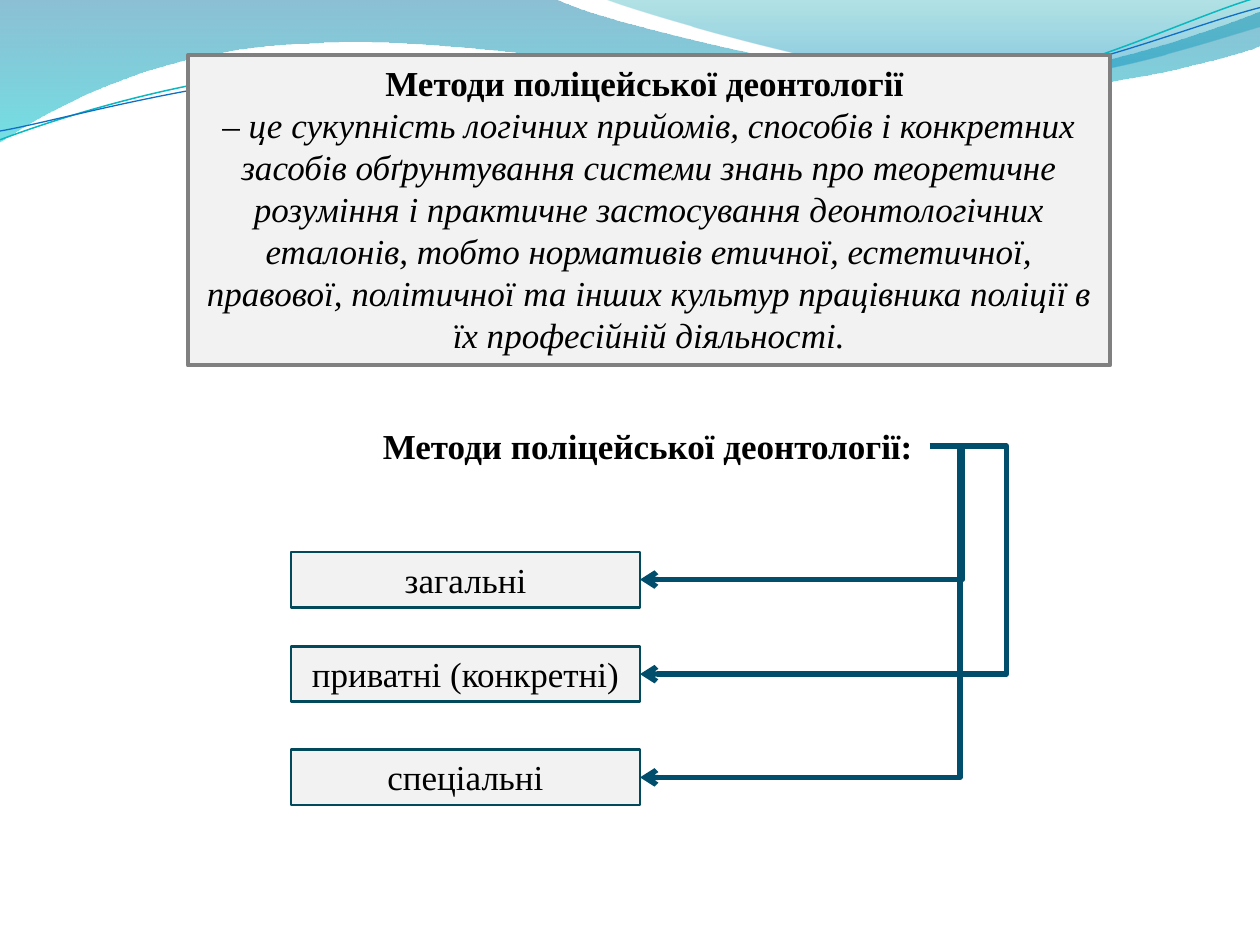
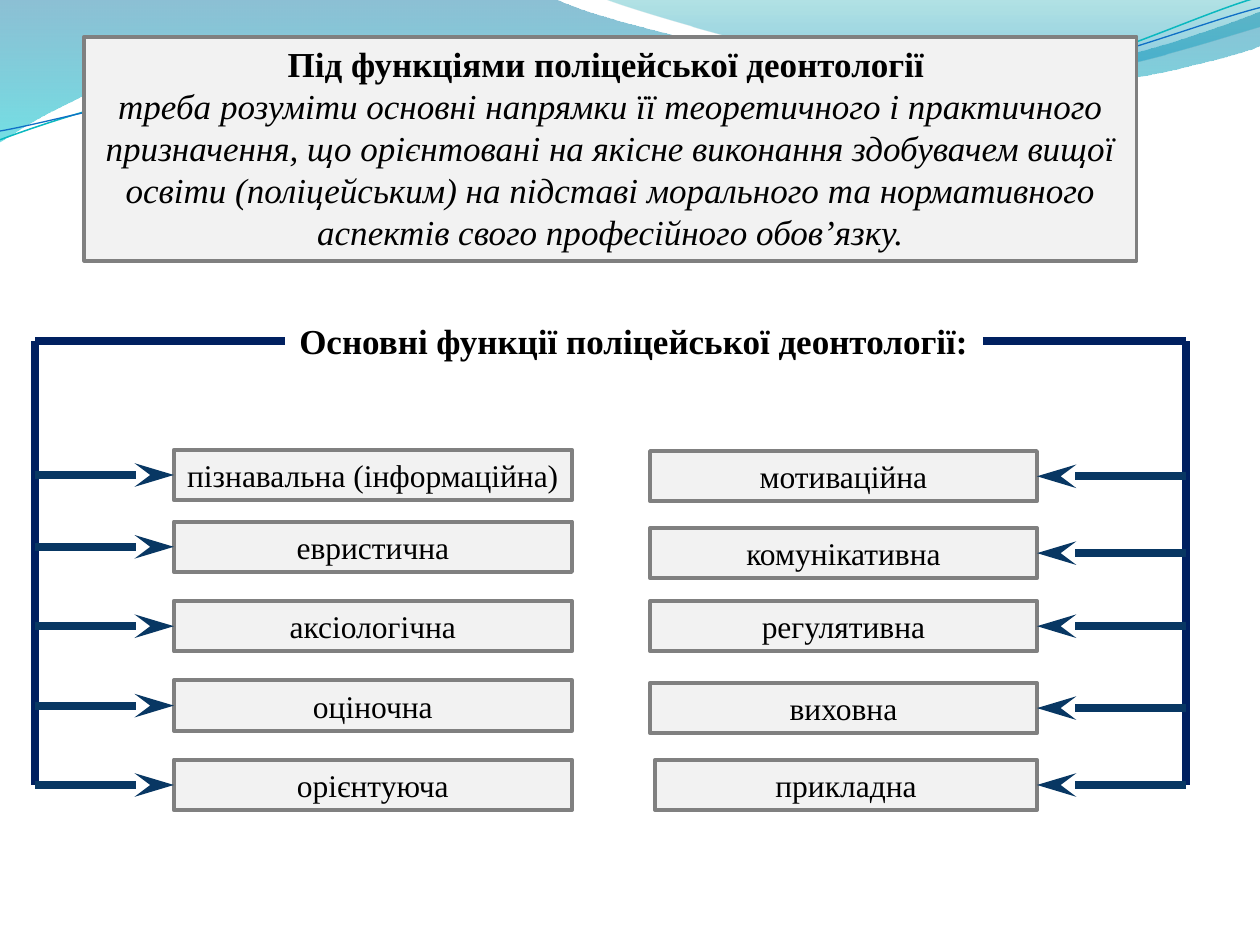
from math import cos, radians, sin

from pptx import Presentation
from pptx.dml.color import RGBColor
from pptx.enum.shapes import MSO_CONNECTOR, MSO_SHAPE
from pptx.enum.text import MSO_ANCHOR, MSO_AUTO_SIZE, PP_ALIGN
from pptx.oxml import parse_xml
from pptx.oxml.ns import nsdecls, qn
from pptx.util import Inches, Pt
from lxml.etree import SubElement

FONT = "Times New Roman"
BLACK, WHITE = "000000", "FFFFFF"
PALE, GREY = "F2F2F2", "808080"
TEAL, STEEL = "03495C", "004E6C"
NAVY, BLUE = "002060", "083763"
LEFT, RIGHT = 1, 3
TILT = -2.7

# A wave is a frame, a start point, then lines (2 numbers) and curves (6).
BANDS = [
    ((-0.01, -0.01, 10.02, 1.14), (0, 0),
     [(4.4, -0.01), (4.76, 0.17, 6.64, 0.63, 7.58, 0.63),
      (8.53, 0.63, 9.58, 0.26, 10, 0.09), (10.01, 0.36),
      (9.83, 0.44, 8.7, 0.76, 7.46, 0.75),
      (6.22, 0.75, 3.82, 0.28, 2.57, 0.34),
      (1.29, 0.36, 0.46, 0.83, -0.01, 1.13), (0, 0)],
     [(0, "0074A1", 45), (100, "00C6CF", 55)]),
    ((4.79, -0.01, 5.21, 0.7), (4.79, -0.01),
     [(5.09, 0.11, 6.82, 0.62, 7.69, 0.65),
      (8.56, 0.69, 9.61, 0.32, 10, 0.21), (10, 0), (4.79, -0.01)],
     [(0, "00A1A9", 30), (80, "008BBF", 45)]),
]
THREADS = [
    ((-0.02, 0.22, 10.02, 0.71), (0, 1.11),
     [(0.48, 0.93, 1.58, 0.57, 2.77, 0.52),
      (3.95, 0.47, 5.93, 0.89, 7.13, 0.8),
      (8.33, 0.71, 9.38, 0.15, 9.98, -0.02)], "0AB8BF", 0.85),
    ((-0.02, 0.3, 10.03, 0.58), (0, 1.04),
     [(0.47, 0.96, 1.64, 0.61, 2.83, 0.56),
      (4.03, 0.51, 5.97, 0.84, 7.17, 0.75),
      (8.36, 0.67, 9.41, 0.21, 10, 0.06)], "0F6FC6", 0.75),
]


def paint(target, color):
    """Give a fill or a font a solid colour from a hex string."""
    if hasattr(target, "solid"):
        target.solid()
        target = target.fore_color
    else:
        target = target.color
    target.rgb = RGBColor.from_string(color)


def place_in(frame, x, y, tilt):
    """Turn a slide point into a point of a frame that is tilted."""
    left, top, w, h = frame
    dx, dy = x - left - w / 2, y - top - h / 2
    c, s = cos(radians(-tilt)), sin(radians(-tilt))
    return Inches(w / 2 + dx * c - dy * s), Inches(h / 2 + dx * s + dy * c)


def add_wave(slide, frame, start, steps, tilt=0):
    """Build the frame as an outline, then bend it into the wave."""
    x, y, w, h = frame
    pen = slide.shapes.build_freeform(Inches(x), Inches(y))
    pen.add_line_segments([(Inches(x + w), Inches(y)),
                           (Inches(x + w), Inches(y + h))], close=not tilt)
    wave = pen.convert_to_shape()
    wave.rotation = tilt % 360
    wave.shadow.inherit = False
    wave.fill.background()
    outline = next(wave.element.iter(qn("a:path")))
    for old in list(outline):
        if old.tag != qn("a:close"):
            outline.remove(old)
    names = {2: "a:lnTo", 6: "a:cubicBezTo"}
    moves = [("a:moveTo", start)] + [(names[len(s)], s) for s in steps]
    for i, (name, spots) in enumerate(moves):
        move = SubElement(outline, qn(name))
        outline.insert(i, move)
        for px, py in zip(spots[::2], spots[1::2]):
            px, py = place_in(frame, px, py, tilt)
            SubElement(move, qn("a:pt"), x=str(px), y=str(py))
    return wave


def fade(shape, stops):
    """Fill a shape from top to bottom with (place, colour, opacity) stops."""
    marks = "".join(
        f'<a:gs pos="{place * 1000}"><a:srgbClr val="{color}">'
        f'<a:alpha val="{alpha * 1000}"/></a:srgbClr></a:gs>'
        for place, color, alpha in stops)
    blend = parse_xml(f'<a:gradFill {nsdecls("a")}><a:gsLst>{marks}</a:gsLst>'
                      '<a:lin ang="5400000" scaled="0"/></a:gradFill>')
    props = shape.element.spPr
    props.replace(props.find(qn("a:noFill")), blend)


def add_waves(slide, layout):
    """Draw the top waves and move them to the layout that all slides share."""
    waves = []
    for frame, start, steps, stops in BANDS:
        band = add_wave(slide, frame, start, steps)
        fade(band, stops)
        band.line.fill.background()
        waves.append(band)
    for frame, start, steps, color, width in THREADS:
        thread = add_wave(slide, frame, start, steps, TILT)
        paint(thread.line.fill, color)
        thread.line.width = Pt(width)
        waves.append(thread)
    for wave in waves:
        layout.shapes.element.append(wave.element)


def add_text(frame, text, size=20, bold=False, italic=False, first=True,
             align=PP_ALIGN.CENTER):
    para = frame.paragraphs[0] if first else frame.add_paragraph()
    para.alignment = align
    run = para.add_run()
    run.text = text
    font = run.font
    font.name, font.size, font.bold, font.italic = FONT, Pt(size), bold, italic
    paint(font, BLACK)


def add_box(slide, x, y, w, h, fill=PALE, line=GREY, width=2.25, wrap=True):
    box = slide.shapes.add_shape(MSO_SHAPE.RECTANGLE, Inches(x), Inches(y),
                                 Inches(w), Inches(h))
    box.shadow.inherit = False
    paint(box.fill, fill)
    if line:
        paint(box.line.fill, line)
        box.line.width = Pt(width)
    else:
        box.line.fill.background()
    frame = box.text_frame
    frame.word_wrap = wrap
    frame.auto_size = MSO_AUTO_SIZE.SHAPE_TO_FIT_TEXT
    frame.vertical_anchor = MSO_ANCHOR.TOP
    return box


def add_term(slide, place, term, meaning):
    """Add a box with a bold term and its meaning in italics."""
    frame = add_box(slide, *place).text_frame
    add_text(frame, term, bold=True)
    add_text(frame, meaning, italic=True, first=False)


def add_label(slide, place, text, wrap=True, align=PP_ALIGN.CENTER):
    label = add_box(slide, *place, fill=WHITE, line=None, wrap=wrap)
    add_text(label.text_frame, text, bold=True, align=align)
    return label


def add_item(slide, place, text, size, **look):
    item = add_box(slide, *place, **look)
    add_text(item.text_frame, text, size=size)
    return item


def add_line(slide, start, end, color, width, kind=MSO_CONNECTOR.STRAIGHT,
             **head):
    line = slide.shapes.add_connector(kind, *start, *end)
    paint(line.line.fill, color)
    line.line.width = Pt(width)
    props = line.element.spPr
    if head:
        SubElement(props.find(qn("a:ln")), qn("a:tailEnd"), **head)
    SubElement(props, qn("a:effectLst"))
    return line


def port(shape, side):
    """Return the middle of the left or right side."""
    x = shape.left + (shape.width if side == RIGHT else 0)
    return x, shape.top + shape.height // 2


def add_bend(slide, label, item, turn):
    """Lead an elbow arrow from label to item around the line x = turn."""
    start, end = port(label, RIGHT), port(item, RIGHT)
    bend = add_line(slide, start, end, STEEL, 3, MSO_CONNECTOR.ELBOW,
                    type="arrow")
    bend.begin_connect(label, RIGHT)
    bend.end_connect(item, RIGHT)
    ratio = (start[0] - Inches(turn)) / (start[0] - end[0])
    guides = bend.element.spPr.find(qn("a:prstGeom")).get_or_add_avLst()
    SubElement(guides, qn("a:gd"), name="adj1",
               fmla=f"val {round(ratio * 100000)}")


def add_branch(slide, label, items, rail, side):
    """Join label to a rail at x = rail, and the rail to each item."""
    x = Inches(rail)
    start = port(label, side)
    corner = x, start[1]
    beam = add_line(slide, start, corner, NAVY, 4.5)
    beam.begin_connect(label, side)
    add_line(slide, corner, (x, port(items[-1], side)[1]), NAVY, 4.5)
    for item in items:
        end = port(item, side)
        arrow = add_line(slide, (x, end[1]), end, BLUE, 4.5,
                         type="stealth", len="lg")
        arrow.end_connect(item, side)


def draw_methods(slide):
    add_term(slide, (1.49, 0.44, 7.32, 2.46),
             "Методи поліцейської деонтології ",
             "– це сукупність логічних прийомів, способів і конкретних засобів "
             "обґрунтування системи знань про теоретичне розуміння і практичне "
             "застосування деонтологічних еталонів, тобто нормативів етичної, "
             "естетичної, правової, політичної та інших культур працівника "
             "поліції в їх професійній діяльності.")
    label = add_label(slide, (2.94, 3.32, 4.44, 0.44),
                      "Методи поліцейської деонтології:",
                      wrap=False, align=PP_ALIGN.LEFT)
    methods = [("загальні", 4.38, 7.64), ("приватні (конкретні)", 5.13, 7.99),
               ("спеціальні", 5.95, 7.62)]
    for text, y, turn in methods:
        item = add_item(slide, (2.31, y, 2.77, 0.44), text, 20,
                        line=TEAL, width=1.5)
        add_bend(slide, label, item, turn)


def draw_roles(slide):
    add_term(slide, (0.67, 0.29, 8.35, 1.78),
             "Під функціями поліцейської деонтології ",
             "треба розуміти основні напрямки її теоретичного і практичного "
             "призначення, що орієнтовані на якісне виконання здобувачем вищої "
             "освіти (поліцейським) на підставі морального та нормативного "
             "аспектів свого професійного обов’язку.")
    label = add_label(slide, (2.26, 2.49, 5.54, 0.44),
                      "Основні функції поліцейської деонтології:")
    left = [("пізнавальна (інформаційна)", 3.57), ("евристична", 4.14),
            ("аксіологічна", 4.77), ("оціночна", 5.4), ("орієнтуюча", 6.03)]
    right = [("мотиваційна", 3.58), ("комунікативна", 4.19),
             ("регулятивна", 4.77), ("виховна", 5.42), ("прикладна", 6.03)]
    items = [add_item(slide, (1.38, y, 3.16, 0.4), text, 18,
                      wrap=text != left[0][0]) for text, y in left]
    add_branch(slide, label, items, 0.28, LEFT)
    edge = 8.23
    items = []
    for text, y in right:
        w = 3.03 if text == "прикладна" else 3.07
        items.append(add_item(slide, (edge - w, y, w, 0.4), text, 18))
    add_branch(slide, label, items, 9.41, RIGHT)


def main():
    deck = Presentation()
    deck.slide_width, deck.slide_height = Inches(10), Inches(7.5)
    blank = deck.slide_layouts[6]
    first, second = (deck.slides.add_slide(blank) for _ in range(2))
    add_waves(first, blank)
    draw_methods(first)
    draw_roles(second)
    deck.save("out.pptx")


if __name__ == "__main__":
    main()
